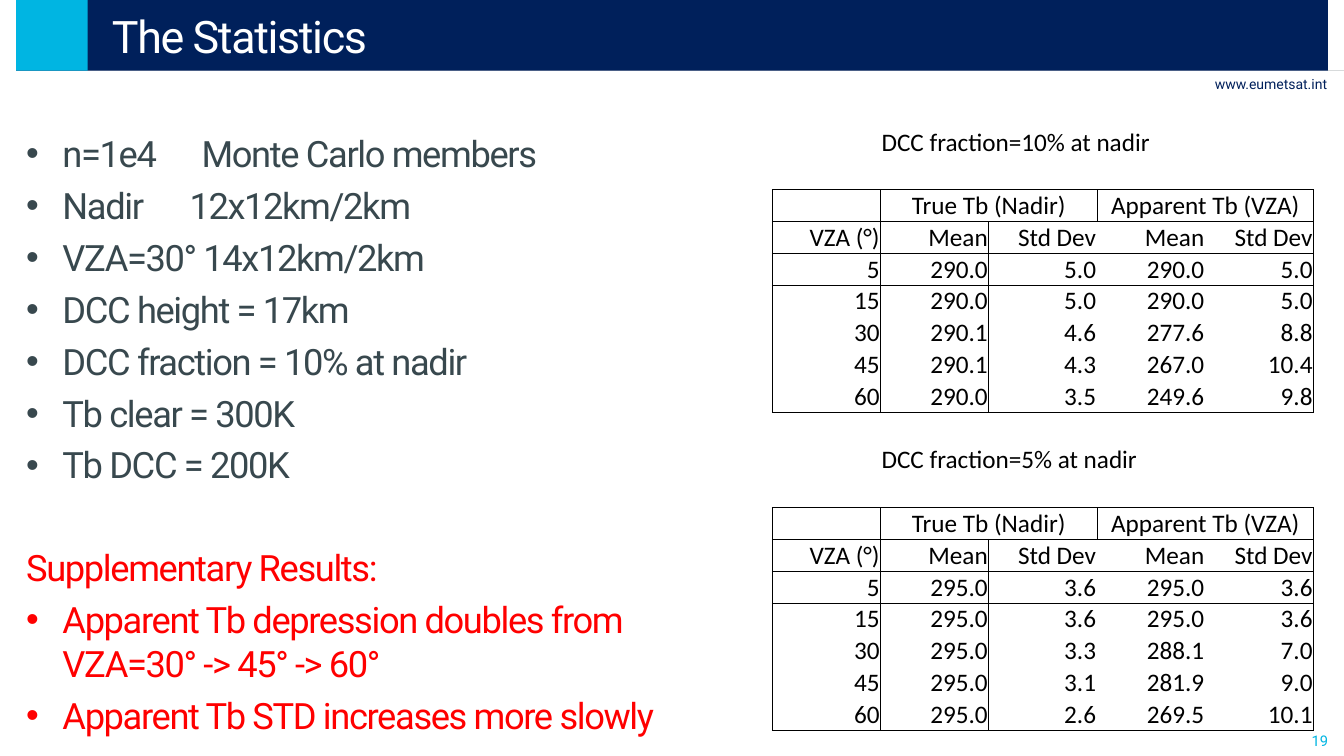
import pptx
import pptx.util
import pptx.dml.color
import pptx.enum.shapes
import pptx.enum.text
import pptx.oxml
import pptx.oxml.ns

Inches, Pt = pptx.util.Inches, pptx.util.Pt
ALIGN = pptx.enum.text.PP_ALIGN
ANCHOR = pptx.enum.text.MSO_ANCHOR
NO_FIT = pptx.enum.text.MSO_AUTO_SIZE.NONE

# Content
TITLE = "The Statistics"
SITE, PAGE = "www.eumetsat.int", "19"
NAVY, CYAN, SLATE, RED = "00205B", "00B5E2", "38484E", "FF0000"
WHITE, BLACK = "FFFFFF", "000000"

# Text, colour, bulleted, tab stop in inches
POINTS = [
    ("n=1e4\tMonte Carlo members", SLATE, True, 1.74),
    ("Nadir\t12x12km/2km", SLATE, True, 1.62),
    ("VZA=30° 14x12km/2km", SLATE, True, None),
    ("DCC height = 17km", SLATE, True, None),
    ("DCC fraction = 10% at nadir", SLATE, True, None),
    ("Tb clear = 300K", SLATE, True, None),
    ("Tb DCC = 200K", SLATE, True, None),
    ("Supplementary Results:", RED, False, None),
    ("Apparent Tb depression doubles from VZA=30° -> 45° -> 60°", RED, True, None),
    ("Apparent Tb STD increases more slowly", RED, True, None),
]
GROUPS = ["True Tb (Nadir)", "Apparent Tb (VZA)"]
HEADINGS = ["VZA (°)", "Mean", "Std Dev", "Mean", "Std Dev"]
BLOCKS = [
    ("DCC fraction=10% at nadir", [
        ("5", "290.0", "5.0", "290.0", "5.0"),
        ("15", "290.0", "5.0", "290.0", "5.0"),
        ("30", "290.1", "4.6", "277.6", "8.8"),
        ("45", "290.1", "4.3", "267.0", "10.4"),
        ("60", "290.0", "3.5", "249.6", "9.8")]),
    ("DCC fraction=5% at nadir", [
        ("5", "295.0", "3.6", "295.0", "3.6"),
        ("15", "295.0", "3.6", "295.0", "3.6"),
        ("30", "295.0", "3.3", "288.1", "7.0"),
        ("45", "295.0", "3.1", "281.9", "9.0"),
        ("60", "295.0", "2.6", "269.5", "10.1")]),
]
COLS, BLOCK_ROWS, BLOCK_STEP = 5, 9, 10
NO_GRID_STYLE = "{2D5ABB26-0587-4C30-8999-92F81FD0307C}"


def rgb(value):
    return pptx.dml.color.RGBColor.from_string(value)


def add_xml(parent, xml):
    ns = pptx.oxml.ns.nsdecls("a")
    parent.append(pptx.oxml.parse_xml(xml.replace("NS", ns, 1)))


def add_run(p, text, size, color, font="Roboto", spacing=None):
    r = p.add_run()
    r.text = text
    r.font.size, r.font.name = Pt(size), font
    r.font.color.rgb = rgb(color)
    if spacing:
        r.font._element.set("spc", str(spacing))


def place(s, x, y, w, h):
    s.left, s.top, s.width, s.height = map(Inches, (x, y, w, h))


def set_indent(p, left, first):
    pPr = p._p.get_or_add_pPr()
    pPr.set("marL", str(Inches(left)))
    pPr.set("indent", str(Inches(first)))
    return pPr


def add_bar(slide, width, color):
    s = slide.shapes.add_shape(pptx.enum.shapes.MSO_SHAPE.RECTANGLE,
                               Inches(0.16), Inches(-0.01), Inches(width), Inches(0.71))
    s.shadow.inherit = False
    s.fill.solid()
    s.fill.fore_color.rgb = rgb(color)
    s.line.fill.background()


def add_label(slide, box, text, size, color):
    tf = slide.shapes.add_textbox(*map(Inches, box)).text_frame
    tf.word_wrap = True
    p = tf.paragraphs[0]
    p.alignment = ALIGN.RIGHT
    add_run(p, text, size, color)


def fill_cell(table, row, col, text, align):
    p = table.cell(row, col).text_frame.paragraphs[0]
    p.alignment = align
    add_run(p, text, 18, BLACK, "Calibri")


def add_borders(cell, row, col):
    """Frame the block, its label column and its heading rows."""
    last = col + (cell.span_width if cell.is_merge_origin else 1) - 1
    sides = {"L": col <= 1, "R": last in (0, COLS - 1),
             "T": row in (2, 4), "B": row in (3, BLOCK_ROWS - 1)}
    for side, shown in sides.items():
        if shown:
            add_xml(cell._tc.get_or_add_tcPr(),
                    f'<a:ln{side} NS w="{Pt(0.5)}"><a:solidFill><a:srgbClr val="{BLACK}"/>'
                    f'</a:solidFill></a:ln{side}>')


def add_statistics(slide):
    rows = BLOCK_STEP * len(BLOCKS) - 1
    frame = slide.shapes.add_table(rows, COLS, Inches(7.66), Inches(1.25),
                                   Inches(5.37), Inches(5.9))
    table = frame.table
    table.first_row = table.horz_banding = False
    table._tbl.tblPr[0].text = NO_GRID_STYLE
    for b, (caption, data) in enumerate(BLOCKS):
        top = b * BLOCK_STEP
        table.cell(top, 1).merge(table.cell(top, COLS - 1))
        fill_cell(table, top, 1, caption, ALIGN.LEFT)
        for g, group in enumerate(GROUPS):
            col = 1 + 2 * g
            table.cell(top + 2, col).merge(table.cell(top + 2, col + 1))
            fill_cell(table, top + 2, col, group, ALIGN.CENTER)
        for i, values in enumerate([HEADINGS] + data):
            for col, value in enumerate(values):
                fill_cell(table, top + 3 + i, col, value, ALIGN.RIGHT)
    for row in range(rows):
        for col in range(COLS):
            cell = table.cell(row, col)
            cell.margin_left = cell.margin_right = cell.margin_top = Inches(0.01)
            cell.margin_bottom = 0
            cell.vertical_anchor = ANCHOR.BOTTOM
            if 2 <= row % BLOCK_STEP < BLOCK_ROWS:
                add_borders(cell, row % BLOCK_STEP, col)
            cell.fill.background()


def main():
    prs = pptx.Presentation()
    prs.slide_width, prs.slide_height = Inches(13.33), Inches(7.5)
    slide = prs.slides.add_slide(prs.slide_layouts[1])
    title, body = slide.placeholders

    # Header rule, labels and bars
    rule = slide.shapes.add_connector(pptx.enum.shapes.MSO_CONNECTOR.STRAIGHT,
                                      Inches(0.16), Inches(0.7), Inches(13.33), Inches(0.7))
    rule.line.width = Pt(0.5)
    rule.line.color.rgb = rgb(SLATE)
    color = rule._element.spPr.find(".//" + pptx.oxml.ns.qn("a:srgbClr"))
    add_xml(color, '<a:alpha NS val="20000"/>')
    add_xml(rule._element.spPr, "<a:effectLst NS/>")
    add_label(slide, (11.92, 0.7, 1.34, 0.27), SITE, 10, NAVY)
    add_label(slide, (12.6, 7.21, 0.67, 0.29), PAGE, 10.5, CYAN)
    add_bar(slide, 13.01, NAVY)
    add_bar(slide, 0.71, CYAN)

    # Title, brought in front of the bars
    slide.shapes._spTree.append(title._element)
    place(title, 0.87, 0, 12.47, 0.7)
    tf = title.text_frame
    tf.auto_size, tf.vertical_anchor = NO_FIT, ANCHOR.MIDDLE
    tf.margin_left = 0
    tf.margin_top = tf.margin_right = tf.margin_bottom = Inches(0.04)
    p = tf.paragraphs[0]
    p.alignment = ALIGN.LEFT
    set_indent(p, 0.24, 0)
    add_run(p, TITLE, 32, WHITE, spacing=-100)

    # Bulleted list
    slide.shapes._spTree.append(body._element)
    place(body, 0.16, 1.25, 6.47, 6.1)
    tf = body.text_frame
    tf.auto_size = NO_FIT
    for i, (text, color, bulleted, tab) in enumerate(POINTS):
        p = tf.add_paragraph() if i else tf.paragraphs[0]
        p.space_before = Pt(0 if i == 0 else 6 if bulleted else 42.3)
        pPr = set_indent(p, 0.36, -0.36) if bulleted else set_indent(p, 0, 0)
        add_xml(pPr, '<a:buChar NS char="•"/>' if bulleted else "<a:buNone NS/>")
        if tab:
            add_xml(pPr, f'<a:tabLst NS><a:tab pos="{Inches(tab)}" algn="l"/></a:tabLst>')
        add_run(p, text, 25.9, color, spacing=-100)

    add_statistics(slide)
    prs.save("out.pptx")


if __name__ == "__main__":
    main()
